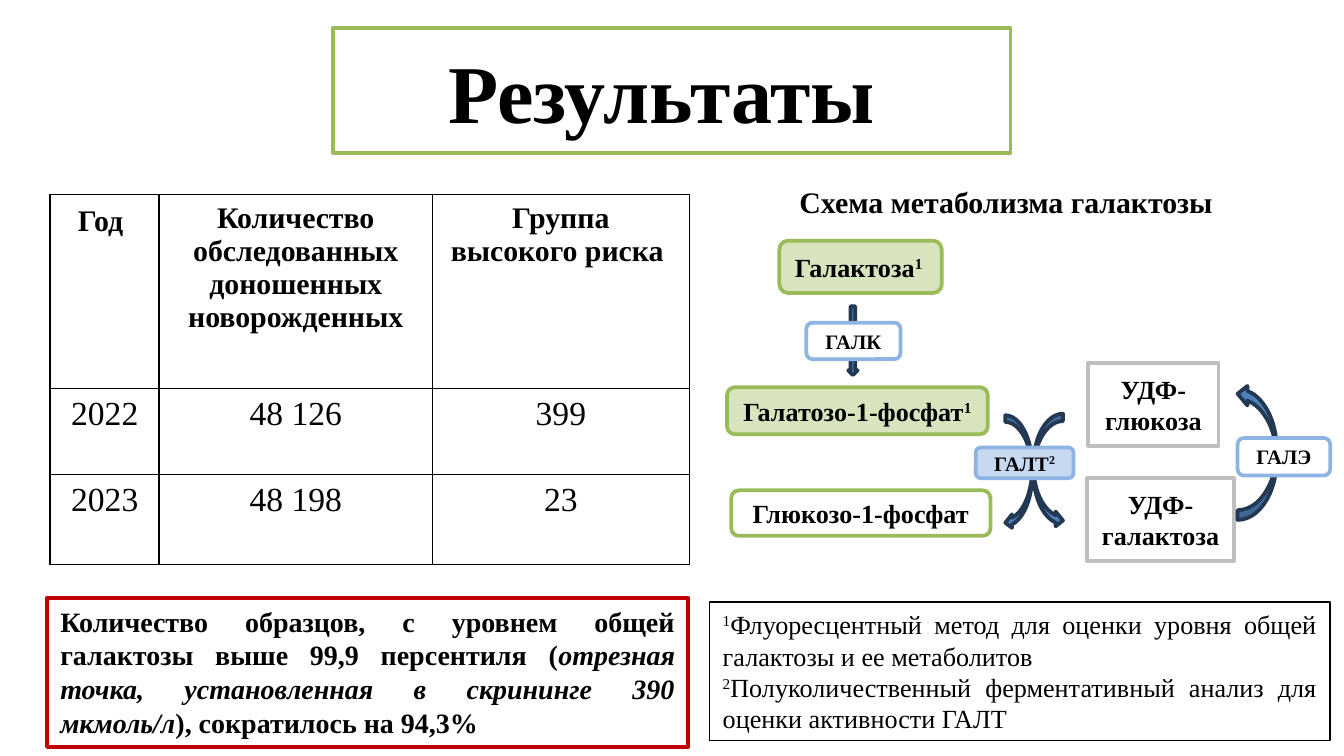
from dataclasses import dataclass
from typing import Optional

from lxml.etree import SubElement
from pptx import Presentation
from pptx.dml.color import RGBColor
from pptx.enum.shapes import MSO_SHAPE
from pptx.enum.text import MSO_ANCHOR, MSO_AUTO_SIZE, PP_ALIGN
from pptx.oxml.ns import qn
from pptx.util import Cm, Pt

FONT = "Times New Roman"
BLACK, WHITE, RED, GRAY = "000000", "FFFFFF", "C00000", "BFBFBF"
GREEN, PALE_GREEN = "9BBB59", "D7E4BD"
SKY, PALE_SKY = "8EB4E3", "C6D9F1"
BLUE, NAVY = "4F81BD", "233953"


@dataclass
class Box:
    """Position and size in centimetres."""
    left: float
    top: float
    width: float
    height: float

    def lengths(self) -> tuple:
        return Cm(self.left), Cm(self.top), Cm(self.width), Cm(self.height)


@dataclass
class Node:
    text: str
    box: Box
    line: str
    fill: str = WHITE
    size: float = 14
    note: str = ""
    kind: MSO_SHAPE = MSO_SHAPE.ROUNDED_RECTANGLE


@dataclass
class Arrow:
    kind: MSO_SHAPE
    box: Box
    flipped: bool = False


def color(value: str) -> RGBColor:
    return RGBColor.from_string(value)


def add_run(paragraph, text: str, *, size: float, bold=False, italic=False, raised=False) -> None:
    run = paragraph.add_run()
    run.text = text
    font = run.font
    font.name, font.size, font.bold, font.italic = FONT, Pt(size), bold, italic
    font.color.rgb = color(BLACK)
    if raised:
        run._r.get_or_add_rPr().set("baseline", "30000")


def outline(shape, line: str, width: float = 2, fill: Optional[str] = None) -> None:
    shape.line.color.rgb = color(line)
    shape.line.width = Pt(width)
    if fill:
        shape.fill.solid()
        shape.fill.fore_color.rgb = color(fill)
    else:
        shape.fill.background()


def add_block(slide, kind: MSO_SHAPE, box: Box, line: str, width: float = 2,
              fill: Optional[str] = None):
    shape = slide.shapes.add_shape(kind, *box.lengths())
    shape.shadow.inherit = False
    outline(shape, line, width, fill)
    return shape


def add_node(slide, node: Node) -> None:
    frame = add_block(slide, node.kind, node.box, node.line, fill=node.fill).text_frame
    frame.word_wrap = True
    frame.vertical_anchor = MSO_ANCHOR.MIDDLE
    frame.margin_left = frame.margin_right = Cm(0.1)
    paragraph = frame.paragraphs[0]
    paragraph.alignment = PP_ALIGN.CENTER
    add_run(paragraph, node.text, size=node.size, bold=True)
    if node.note:
        add_run(paragraph, node.note, size=node.size, bold=True, raised=True)


def add_arrow(slide, arrow: Arrow) -> None:
    shape = add_block(slide, arrow.kind, arrow.box, NAVY, fill=BLUE)
    if arrow.flipped:
        shape._element.spPr.find(qn("a:xfrm")).set("flipV", "1")


def add_note(slide, box: Box, line: str, width: float, paragraphs: list) -> None:
    """Justified framed text; each paragraph is a list of (text, format)."""
    frame = add_block(slide, MSO_SHAPE.RECTANGLE, box, line, width).text_frame
    frame.word_wrap = True
    frame.auto_size = MSO_AUTO_SIZE.SHAPE_TO_FIT_TEXT
    frame.vertical_anchor = MSO_ANCHOR.TOP
    for index, parts in enumerate(paragraphs):
        paragraph = frame.add_paragraph() if index else frame.paragraphs[0]
        paragraph.alignment = PP_ALIGN.JUSTIFY
        for text, style in parts:
            add_run(paragraph, text, **style)


def border_cell(cell) -> None:
    properties = cell._tc.get_or_add_tcPr()
    for index, side in enumerate(("lnL", "lnR", "lnT", "lnB")):
        edge = properties.makeelement(qn(f"a:{side}"), {"w": str(Pt(1))})
        properties.insert(index, edge)
        fill = SubElement(edge, qn("a:solidFill"))
        SubElement(fill, qn("a:srgbClr"), val=BLACK)


def add_results(slide, box: Box, columns: list, heights: list, rows: list) -> None:
    table = slide.shapes.add_table(len(rows), len(columns), *box.lengths()).table
    table.horz_banding = table.first_row = False
    for column, width in zip(table.columns, columns):
        column.width = Cm(width)
    for r, (values, height) in enumerate(zip(rows, heights)):
        table.rows[r].height = Cm(height)
        for c, value in enumerate(values):
            cell = table.cell(r, c)
            cell.fill.background()
            border_cell(cell)
            paragraph = cell.text_frame.paragraphs[0]
            paragraph.alignment = PP_ALIGN.CENTER
            header = r == 0
            add_run(paragraph, value, size=16 if header else 18, bold=header)
            if header and c == 0:
                add_run(paragraph, " ", size=18, bold=True)


def main() -> None:
    deck = Presentation()
    deck.slide_width, deck.slide_height = Cm(25.4), Cm(14.29)
    slide = deck.slides.add_slide(deck.slide_layouts[5])

    # Title
    title = slide.shapes.title
    title.left, title.top, title.width, title.height = Box(6.3, 0.53, 12.8, 2.36).lengths()
    outline(title, GREEN)
    title.text_frame.vertical_anchor = MSO_ANCHOR.MIDDLE
    heading = title.text_frame.paragraphs[0]
    heading.alignment = PP_ALIGN.CENTER
    add_run(heading, "Результаты ", size=44, bold=True)

    # Screening results
    add_results(slide, Box(0.95, 3.68, 12.08, 6.99), [2.06, 5.16, 4.86], [3.66, 1.63, 1.7], [
        ("Год", "Количество обследованных доношенных новорожденных", "Группа высокого риска "),
        ("2022", "48 126", "399"),
        ("2023", "48 198", "23"),
    ])

    # Scheme caption
    caption = slide.shapes.add_textbox(*Box(14.86, 3.35, 8.43, 0.94).lengths()).text_frame
    caption.word_wrap = False
    caption.auto_size = MSO_AUTO_SIZE.SHAPE_TO_FIT_TEXT
    add_run(caption.paragraphs[0], "Схема метаболизма галактозы", size=16, bold=True)

    # Conclusion
    strong = dict(size=15, bold=True)
    add_note(slide, Box(0.89, 11.3, 12.12, 2.82), RED, 2, [[
        ("Количество образцов, с уровнем общей галактозы выше 99,9 персентиля (", strong),
        ("отрезная точка, установленная в скрининге 390 мкмоль/л", dict(strong, italic=True)),
        ("), сократилось на 94,3%", strong),
    ]])

    # Metabolites, then reaction arrows, then the enzymes over them
    metabolites = [
        Node("Галактоза", Box(14.73, 4.55, 3.07, 0.99), GREEN, PALE_GREEN, note="1 "),
        Node("Галатозо-1-фосфат", Box(13.74, 7.32, 4.93, 0.89), GREEN, PALE_GREEN, note="1"),
        Node("Глюкозо-1-фосфат", Box(13.82, 9.27, 4.9, 0.86), GREEN),
        Node("УДФ-глюкоза", Box(20.57, 6.86, 2.46, 1.57), GRAY, kind=MSO_SHAPE.RECTANGLE),
        Node("УДФ-галактоза", Box(20.55, 9.04, 2.77, 1.57), GRAY, kind=MSO_SHAPE.RECTANGLE),
    ]
    arrows = [
        Arrow(MSO_SHAPE.CURVED_LEFT_ARROW, Box(19, 7.85, 0.51, 2.16)),
        Arrow(MSO_SHAPE.CURVED_RIGHT_ARROW, Box(19.53, 7.82, 0.56, 2.16)),
        Arrow(MSO_SHAPE.CURVED_LEFT_ARROW, Box(23.39, 7.26, 0.74, 2.57), flipped=True),
        Arrow(MSO_SHAPE.DOWN_ARROW, Box(16.03, 5.79, 0.18, 1.3)),
    ]
    enzymes = [
        Node("ГАЛЭ", Box(23.39, 8.28, 1.75, 0.71), SKY, size=11),
        Node("ГАЛТ", Box(18.44, 8.46, 1.85, 0.58), SKY, PALE_SKY, size=11, note="2"),
        Node("ГАЛК", Box(15.24, 6.1, 1.78, 0.69), SKY, size=11),
    ]
    for metabolite in metabolites:
        add_node(slide, metabolite)
    for arrow in arrows:
        add_arrow(slide, arrow)
    for enzyme in enzymes:
        add_node(slide, enzyme)

    # Footnotes on methods
    methods = [
        "Флуоресцентный метод для оценки уровня общей галактозы и ее метаболитов",
        "Полуколичественный ферментативный анализ для оценки активности ГАЛТ",
    ]
    add_note(slide, Box(13.41, 11.38, 11.73, 2.62), BLACK, 0.75, [
        [(str(number), dict(size=14, raised=True)), (method, dict(size=14))]
        for number, method in enumerate(methods, 1)
    ])

    deck.save("out.pptx")


if __name__ == "__main__":
    main()
